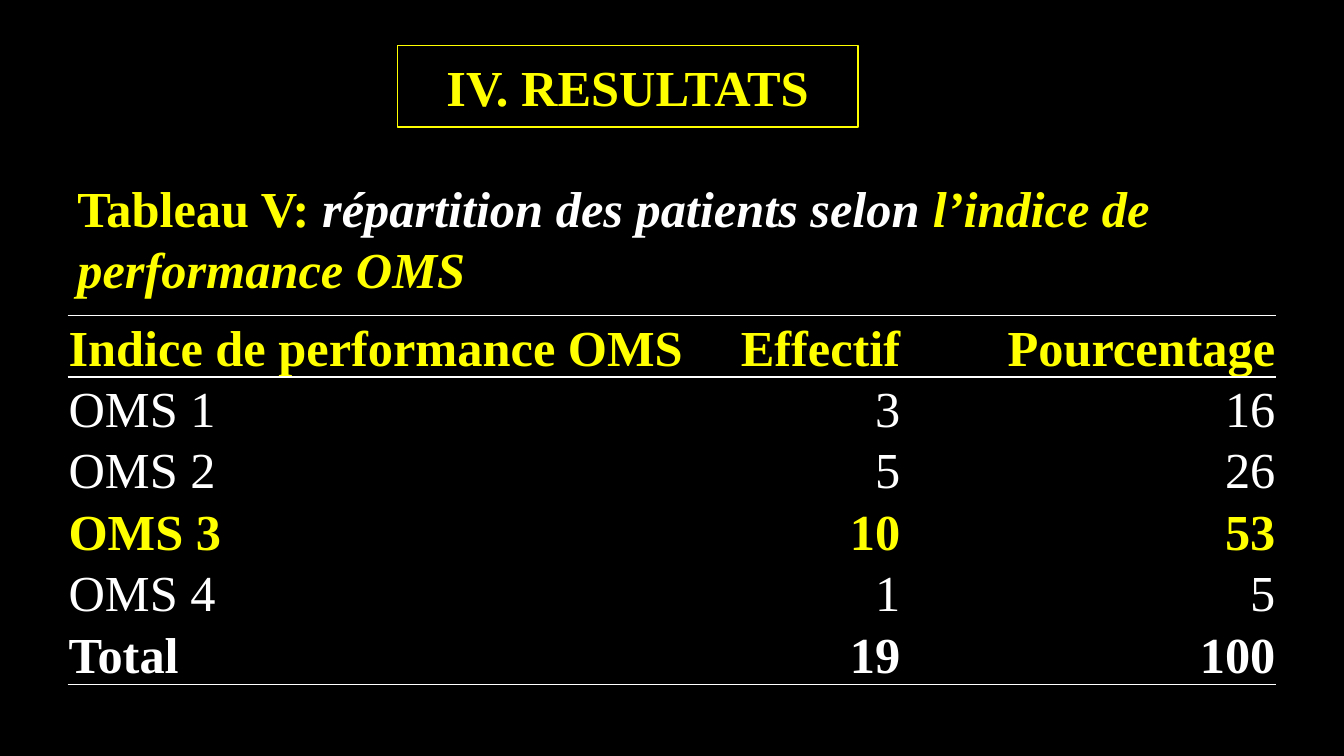
from lxml.etree import SubElement
from pptx import Presentation
from pptx.dml.color import RGBColor
from pptx.enum.shapes import MSO_SHAPE
from pptx.enum.text import MSO_ANCHOR, PP_ALIGN
from pptx.oxml.ns import qn
from pptx.util import Inches, Pt

YELLOW, WHITE, BLACK = "FFFF00", "FFFFFF", "000000"
TITLE = "IV. RESULTATS"
CAPTION = [  # text, colour, italic
    ("Tableau V: ", YELLOW, False),
    ("répartition des patients selon ", WHITE, True),
    ("l’indice de performance OMS", YELLOW, True),
]
ROWS = [  # cells, colour, bold
    (("Indice de performance OMS", "Effectif", "Pourcentage"), YELLOW, True),
    (("OMS 1", "3", "16"), WHITE, False),
    (("OMS 2", "5", "26"), WHITE, False),
    (("OMS 3", "10", "53"), YELLOW, True),
    (("OMS 4", "1", "5"), WHITE, False),
    (("Total", "19", "100"), WHITE, True),
]
COL_WIDTHS = (6.27, 2, 3.72)
ROW_HEIGHT = 0.61
LEFT = 0.67


def rgb(color):
    return RGBColor.from_string(color)


def set_font(font, color, bold=True, italic=False):
    font.name, font.size = "Times New Roman", Pt(36)
    font.bold, font.italic = bold, italic
    font.color.rgb = rgb(color)


def set_borders(cell, ruled_sides):
    """Draw white rules on the given sides (T, B) and clear the others."""
    tcPr = cell._tc.get_or_add_tcPr()
    for i, side in enumerate("LRTB"):
        ln = SubElement(tcPr, qn(f"a:ln{side}"), w=str(Pt(1)))
        tcPr.insert(i, ln)
        if side in ruled_sides:
            fill = SubElement(ln, qn("a:solidFill"))
            SubElement(fill, qn("a:srgbClr"), val=WHITE)
        else:
            SubElement(ln, qn("a:noFill"))


def add_title(s):
    sp = s.shapes.add_shape(MSO_SHAPE.RECTANGLE, Inches(3.94), Inches(0.45),
                            Inches(4.57), Inches(0.81))
    sp.shadow.inherit = False
    sp.fill.background()
    sp.line.color.rgb = rgb(YELLOW)
    sp.line.width = Pt(1)
    tf = sp.text_frame
    tf.vertical_anchor = MSO_ANCHOR.MIDDLE
    p = tf.paragraphs[0]
    p.text, p.alignment = TITLE, PP_ALIGN.CENTER
    set_font(p.font, YELLOW)


def add_caption(s):
    tf = s.shapes.add_textbox(Inches(LEFT), Inches(1.71),
                              Inches(11.86), Inches(1.31)).text_frame
    tf.word_wrap = True
    for text, color, italic in CAPTION:
        r = tf.paragraphs[0].add_run()
        r.text = text
        set_font(r.font, color, italic=italic)


def add_results(s):
    table = s.shapes.add_table(
        len(ROWS), len(COL_WIDTHS), Inches(LEFT), Inches(3.13),
        Inches(sum(COL_WIDTHS)), Inches(ROW_HEIGHT * len(ROWS))).table
    table.first_row = table.horz_banding = False
    for column, width in zip(table.columns, COL_WIDTHS):
        column.width = Inches(width)
    ruled = {0: "TB", 1: "T", len(ROWS) - 1: "B"}
    for i, (texts, color, bold) in enumerate(ROWS):
        table.rows[i].height = Inches(ROW_HEIGHT)
        for j, text in enumerate(texts):
            cell = table.cell(i, j)
            cell.fill.background()
            cell.margin_left = cell.margin_right = cell.margin_top = Inches(0.01)
            cell.margin_bottom = 0
            cell.vertical_anchor = MSO_ANCHOR.BOTTOM
            set_borders(cell, ruled.get(i, ""))
            p = cell.text_frame.paragraphs[0]
            p.text = text
            p.alignment = PP_ALIGN.RIGHT if j else PP_ALIGN.LEFT
            set_font(p.font, color, bold)


def main():
    prs = Presentation()
    prs.slide_width, prs.slide_height = Inches(13.33), Inches(7.5)
    s = prs.slides.add_slide(prs.slide_layouts[6])
    s.background.fill.solid()
    s.background.fill.fore_color.rgb = rgb(BLACK)
    add_title(s)
    add_results(s)
    add_caption(s)
    prs.save("out.pptx")


if __name__ == "__main__":
    main()
